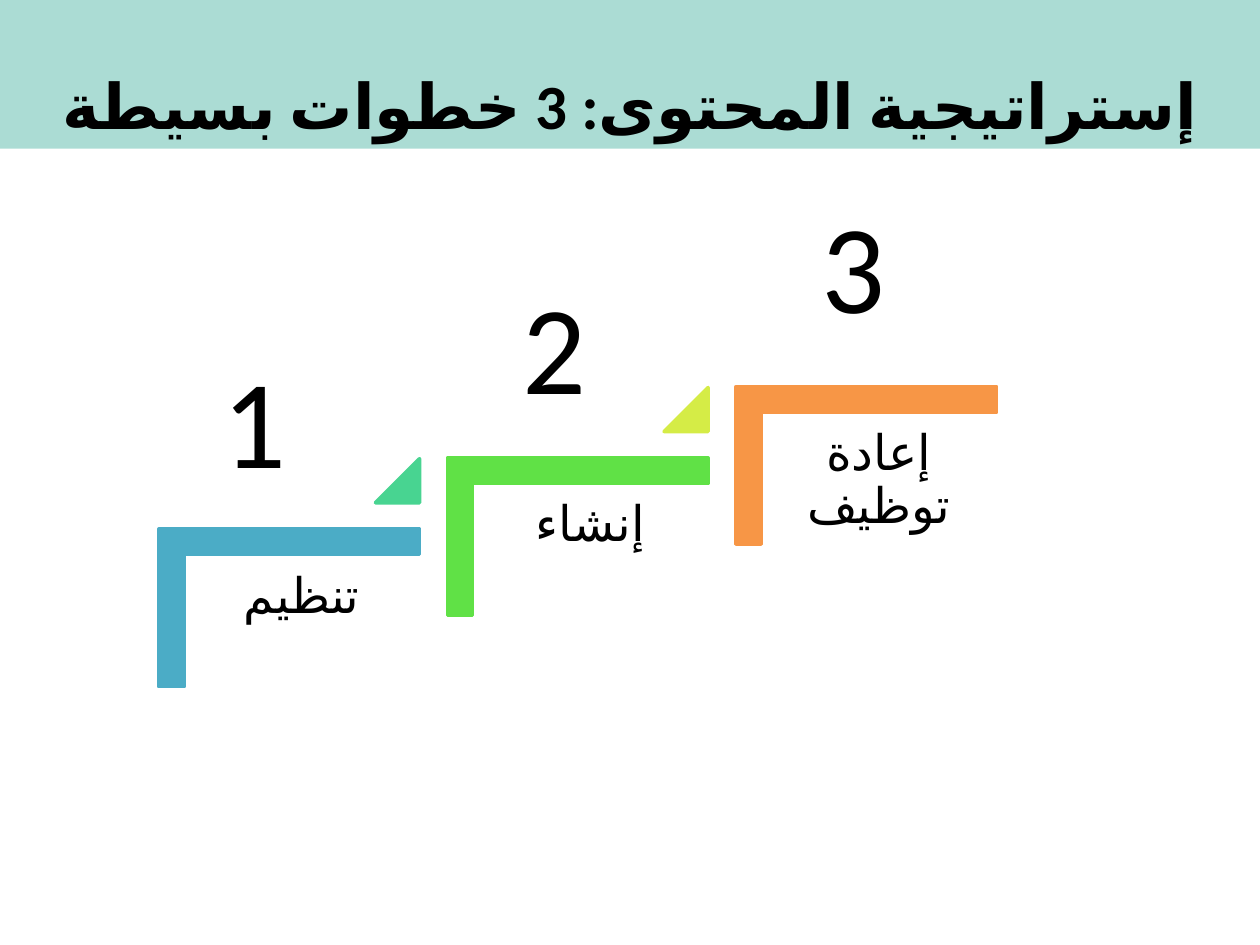
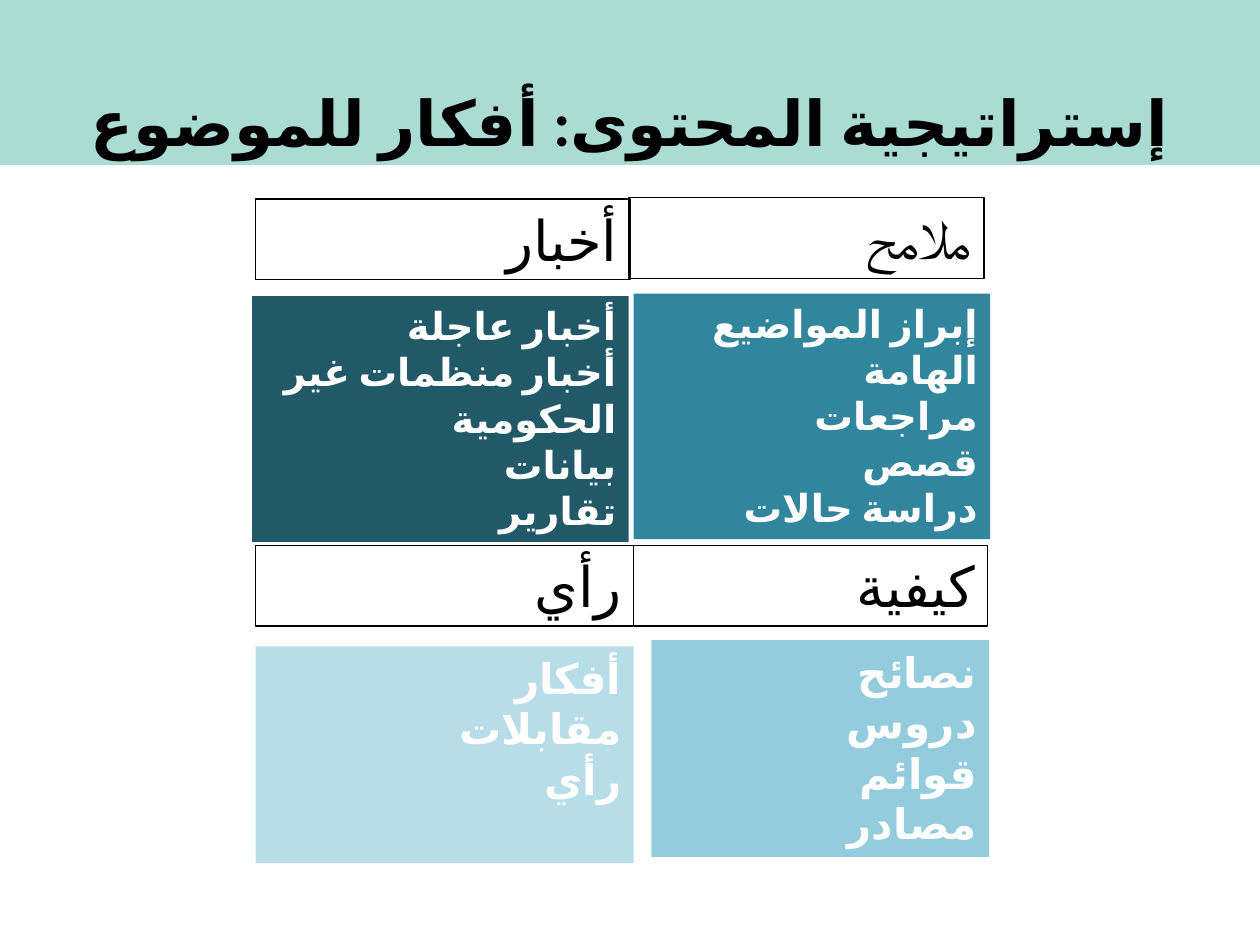
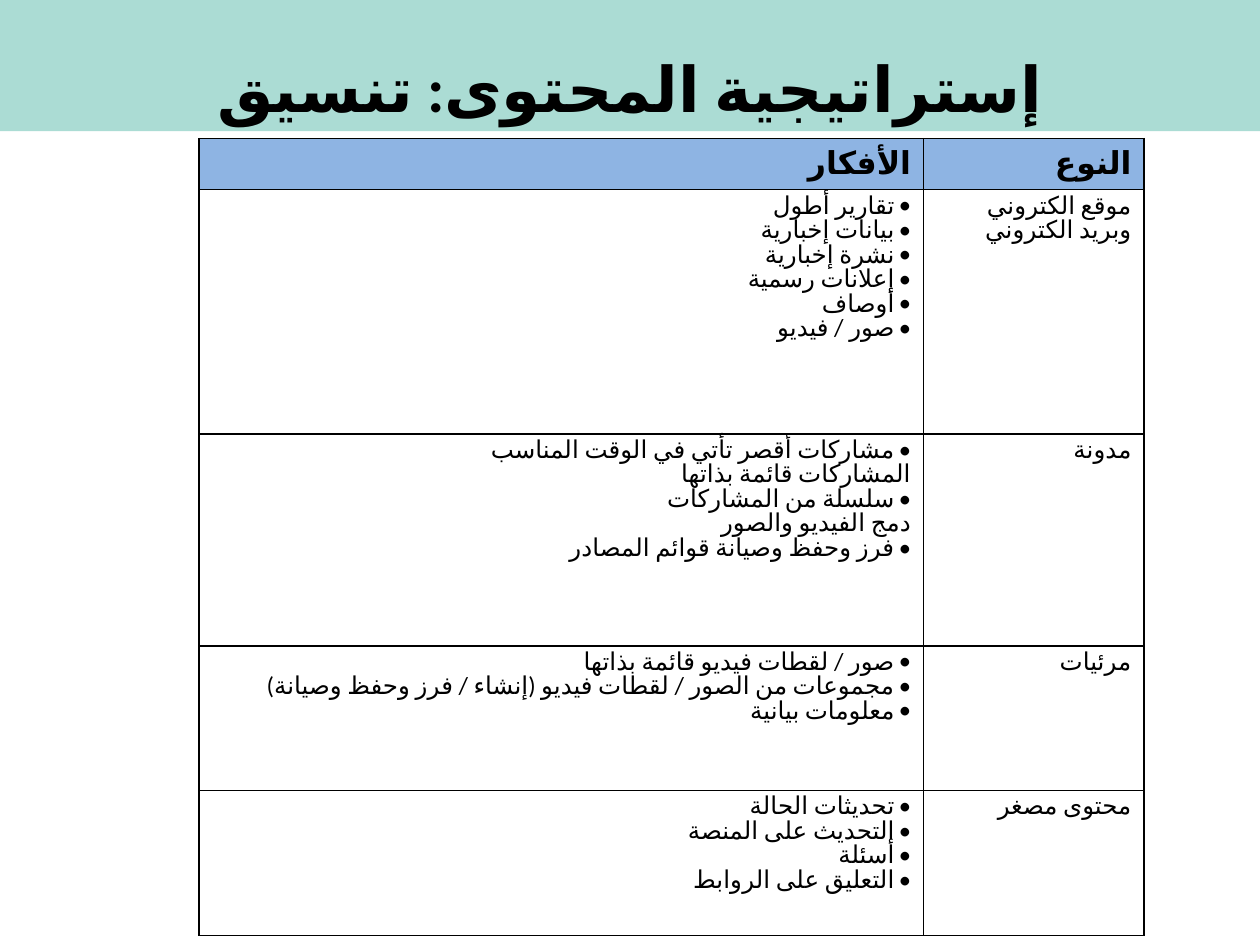
from dataclasses import dataclass
from typing import Any

from lxml import etree
from pptx import Presentation
from pptx import util as u
from pptx.dml import color
from pptx.enum import shapes, text
from pptx.oxml import ns

BAND = "ABDCD4"
BLACK = "000000"
WHITE = "FFFFFF"
HEADER_FILL = "8EB4E3"
RIGHT = text.PP_ALIGN.RIGHT
CENTER = text.PP_ALIGN.CENTER
SHAPE = shapes.MSO_SHAPE
TITLE_FONT = {"name": "Arial", "size": u.Pt(36), "bold": True}
ARABIC_FONT = "Calibri"
ARABIC_LANGUAGE = "ar-SA"


@dataclass(frozen=True)
class Box:
    left: float
    top: float
    width: float
    height: float

    def lengths(self) -> list[int]:
        return [u.Inches(value) for value in (self.left, self.top, self.width, self.height)]


@dataclass(frozen=True)
class Step:
    label: str
    fill: str
    number_top: float
    triangle_fill: str | None = None


@dataclass(frozen=True)
class Topic:
    heading: str
    heading_box: Box
    ideas: tuple[str, ...]
    ideas_box: Box
    fill: str
    size: int
    arabic_heading_font: bool = True


@dataclass(frozen=True)
class Line:
    text: str
    bulleted: bool = True


@dataclass(frozen=True)
class Channel:
    name: str
    height: float
    ideas: tuple[Line, ...]


STEPS = (
    Step("تنظيم", "4BACC6", 2.67, "48D491"),
    Step("إنشاء", "60E146", 2.08, "D5EC46"),
    Step("إعادة توظيف", "F79646", 1.44),
)

TOPICS = (
    Topic("أخبار", Box(2.03, 1.58, 2.97, 0.64),
          ("أخبار عاجلة", "أخبار منظمات غير الحكومية", "بيانات", "تقارير"),
          Box(2, 2.35, 2.99, 1.95), "215968", 22),
    Topic("ملامح", Box(4.99, 1.57, 2.82, 0.64),
          ("إبراز المواضيع الهامة", "مراجعات", "قصص", "دراسة حالات"),
          Box(5.03, 2.33, 2.83, 1.95), "31859C", 22, False),
    Topic("رأي", Box(2.03, 4.33, 3, 0.64),
          ("أفكار", "مقابلات", "رأي"),
          Box(2.03, 5.13, 3, 1.72), "B7DEE8", 24),
    Topic("كيفية", Box(5.03, 4.33, 2.81, 0.64),
          ("نصائح", "دروس", "قوائم", "مصادر"),
          Box(5.17, 5.08, 2.68, 1.72), "93CDDD", 24),
)

CHANNELS = (
    Channel("موقع الكتروني وبريد الكتروني", 1.94, (
        Line("تقارير أطول"), Line("بيانات إخبارية"), Line("نشرة إخبارية"),
        Line("إعلانات رسمية"), Line("أوصاف"), Line("صور / فيديو"))),
    Channel("مدونة", 1.68, (
        Line("مشاركات أقصر تأتي في الوقت المناسب"),
        Line("المشاركات قائمة بذاتها", False),
        Line("سلسلة من المشاركات"),
        Line("دمج الفيديو والصور", False),
        Line("فرز وحفظ وصيانة قوائم المصادر"))),
    Channel("مرئيات", 1.15, (
        Line("صور / لقطات فيديو قائمة بذاتها"),
        Line("مجموعات من الصور / لقطات فيديو (إنشاء / فرز وحفظ وصيانة)"),
        Line("معلومات بيانية"))),
    Channel("محتوى مصغر", 1.15, (
        Line("تحديثات الحالة"), Line("التحديث على المنصة"),
        Line("أسئلة"), Line("التعليق على الروابط"))),
)


def apply(target: Any, values: dict[str, Any]) -> None:
    for name, value in values.items():
        setattr(target, name, value)


def paint(fill: Any, hex_color: str | None) -> None:
    if hex_color is None:
        fill.background()
        return
    fill.solid()
    fill.fore_color.rgb = color.RGBColor.from_string(hex_color)


def add_bullet(paragraph: Any) -> None:
    properties = paragraph._p.get_or_add_pPr()
    indent = u.Inches(0.13)
    properties.set("marL", str(indent))
    properties.set("indent", str(-indent))
    etree.SubElement(properties, ns.qn("a:buFont")).set("typeface", ARABIC_FONT)
    etree.SubElement(properties, ns.qn("a:buChar")).set("char", "•")


def set_arabic_font(run: Any) -> None:
    properties = run._r.get_or_add_rPr()
    properties.set("lang", ARABIC_LANGUAGE)
    etree.SubElement(properties, ns.qn("a:cs")).set("typeface", ARABIC_FONT)


def write(frame: Any, lines: tuple[Line, ...], font: dict[str, Any], hex_color: str = BLACK,
          rtl: bool = True, arabic_font: bool = True, **layout: Any) -> None:
    frame.word_wrap = True
    for index, line in enumerate(lines):
        paragraph = frame.add_paragraph() if index else frame.paragraphs[0]
        apply(paragraph, layout)
        if rtl:
            paragraph._p.get_or_add_pPr().set("rtl", "1")
        if line.bulleted:
            add_bullet(paragraph)
        run = paragraph.add_run()
        run.text = line.text
        apply(run.font, font)
        paint(run.font.fill, hex_color)
        if rtl and arabic_font:
            set_arabic_font(run)


def plain(*texts: str) -> tuple[Line, ...]:
    return tuple(Line(value, False) for value in texts)


def calibri(size: float, bold: bool = False) -> dict[str, Any]:
    return {"name": "Calibri", "size": u.Pt(size), "bold": bold}


def add_titled_slide(presentation: Any, title: str, band_height: float) -> Any:
    slide = presentation.slides.add_slide(presentation.slide_layouts[5])
    band = slide.shapes.title
    apply(band, dict(zip(("left", "top", "width", "height"), Box(0, 0, 10, band_height).lengths())))
    paint(band.fill, BAND)
    apply(band.text_frame, {"auto_size": text.MSO_AUTO_SIZE.NONE,
                            "vertical_anchor": text.MSO_ANCHOR.BOTTOM})
    write(band.text_frame, plain(title), TITLE_FONT, alignment=CENTER)
    return slide


def add_shape(slide: Any, kind: Any, box: Box, fill: str | None, line: str | None = None,
              line_width: float = 2) -> Any:
    shape = slide.shapes.add_shape(kind, *box.lengths())
    shape.shadow.inherit = False
    paint(shape.fill, fill)
    paint(shape.line.fill, line)
    if line:
        shape.line.width = u.Pt(line_width)
    return shape


def add_text(slide: Any, box: Box, value: str, font: dict[str, Any], inset: float = 0.1,
             **layout: Any) -> None:
    frame = slide.shapes.add_textbox(*box.lengths()).text_frame
    apply(frame, {"margin_left": u.Inches(inset), "margin_right": u.Inches(inset)})
    if inset > 0.1:
        apply(frame, {"margin_top": u.Inches(inset), "margin_bottom": u.Inches(inset)})
    write(frame, plain(value), font, **layout)


def add_step(slide: Any, index: int, step: Step) -> None:
    across, rise = 2.29 * index, 0.565 * index
    corner = add_shape(slide, SHAPE.CORNER, Box(1.67 + across, 3.79 - rise, 1.25, 2.07),
                       step.fill, step.fill)
    corner.rotation = 90
    for position in range(2):
        corner.adjustments[position] = 0.161
    add_text(slide, Box(1.46 + across, 4.41 - rise, 1.87, 1.64), step.label, calibri(28),
             0.12, alignment=CENTER, line_spacing=0.9)
    if step.triangle_fill:
        triangle = add_shape(slide, SHAPE.ISOSCELES_TRIANGLE,
                             Box(2.98 + across, 3.64 - rise, 0.35, 0.35),
                             step.triangle_fill, step.triangle_fill)
        triangle.adjustments[0] = 1
    add_text(slide, Box(1.67 + 2.375 * index, step.number_top, 0.83, 1.31), str(index + 1),
             calibri(72), rtl=False)


def add_topic(slide: Any, topic: Topic) -> None:
    panel = add_shape(slide, SHAPE.RECTANGLE, topic.ideas_box, topic.fill)
    heading = add_shape(slide, SHAPE.RECTANGLE, topic.heading_box, None, BLACK, 0.75)
    for shape in (panel, heading):
        shape.text_frame.vertical_anchor = text.MSO_ANCHOR.TOP
    write(panel.text_frame, plain(*topic.ideas), calibri(topic.size, True), WHITE, alignment=RIGHT)
    write(heading.text_frame, plain(topic.heading), calibri(32),
          arabic_font=topic.arabic_heading_font, alignment=RIGHT)


def add_borders(cell: Any) -> None:
    properties = cell._tc.get_or_add_tcPr()
    for index, side in enumerate(("lnL", "lnR", "lnT", "lnB")):
        border = etree.Element(ns.qn(f"a:{side}"), w=str(u.Pt(1)))
        fill = etree.SubElement(border, ns.qn("a:solidFill"))
        etree.SubElement(fill, ns.qn("a:srgbClr"), val=BLACK)
        properties.insert(index, border)


def fill_cell(cell: Any, lines: tuple[Line, ...], font: dict[str, Any], fill: str | None,
              **layout: Any) -> None:
    paint(cell.fill, fill)
    add_borders(cell)
    write(cell.text_frame, lines, font, alignment=RIGHT, **layout)


def add_channel_table(slide: Any) -> None:
    heights = [0.39, *(channel.height for channel in CHANNELS)]
    box = Box(1.58, 1.1, 7.5, sum(heights))
    table = slide.shapes.add_table(len(heights), 2, *box.lengths()).table
    apply(table, {"first_row": False, "horz_banding": False})
    for column, width in zip(table.columns, (5.75, 1.75)):
        column.width = u.Inches(width)
    for row, height in zip(table.rows, heights):
        row.height = u.Inches(height)
    for column, heading in enumerate(("الأفكار", "النوع")):
        fill_cell(table.cell(0, column), plain(heading), calibri(18, True), HEADER_FILL)
    for row, channel in enumerate(CHANNELS, 1):
        for column, lines in enumerate((channel.ideas, plain(channel.name))):
            fill_cell(table.cell(row, column), lines, calibri(14), None, line_spacing=u.Pt(14))


def main() -> None:
    presentation = Presentation()
    apply(presentation, {"slide_width": u.Inches(10), "slide_height": u.Inches(7.5)})

    steps_slide = add_titled_slide(presentation, "إستراتيجية المحتوى: 3 خطوات بسيطة", 1.18)
    for index, step in enumerate(STEPS):
        add_step(steps_slide, index, step)

    topics_slide = add_titled_slide(presentation, "إستراتيجية المحتوى: أفكار للموضوع", 1.31)
    for topic in TOPICS:
        add_topic(topics_slide, topic)

    format_slide = add_titled_slide(presentation, "إستراتيجية المحتوى: تنسيق", 1.04)
    add_channel_table(format_slide)

    presentation.save("out.pptx")


if __name__ == "__main__":
    main()
